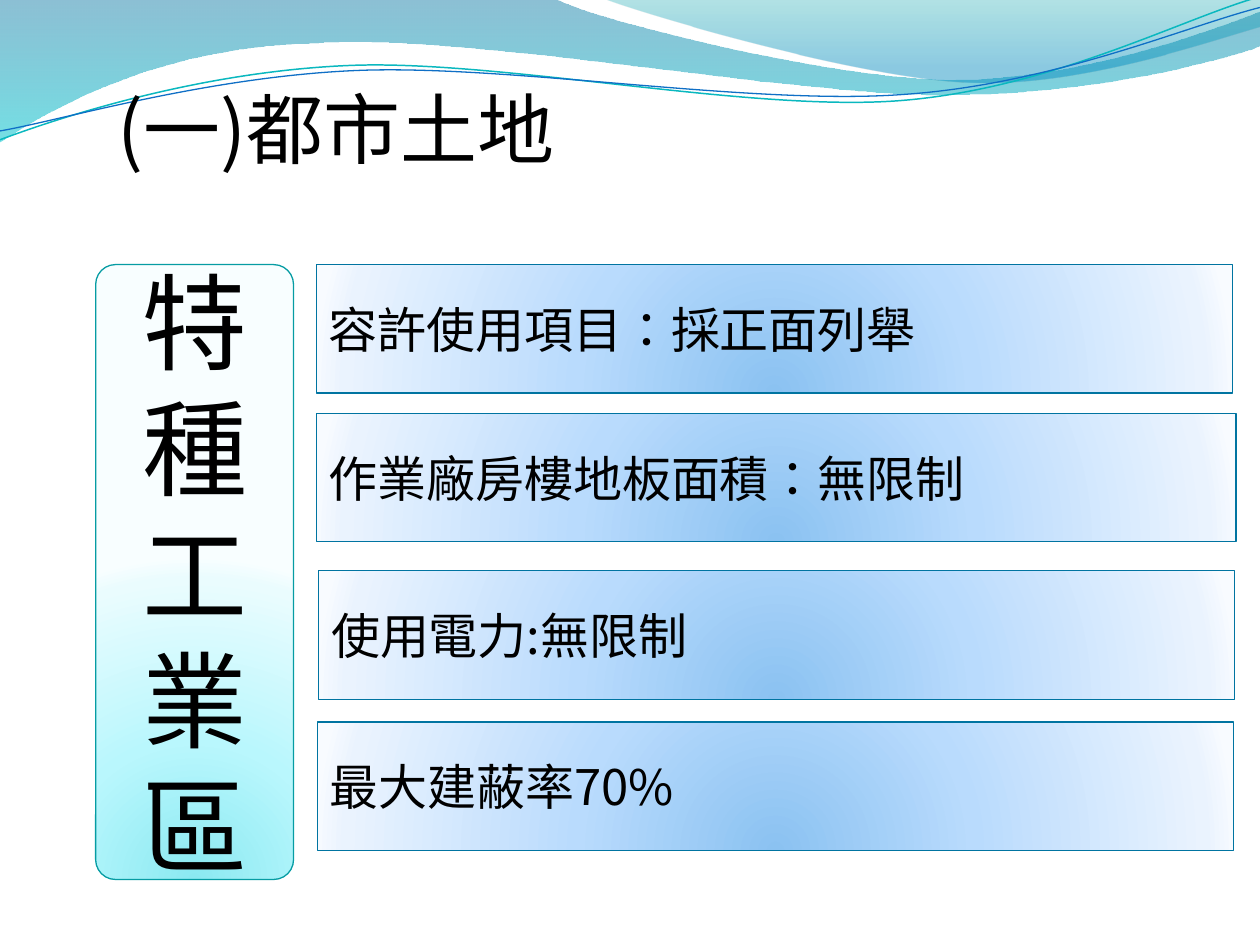
import dataclasses
import math

import pptx
import pptx.dml.color
import pptx.enum.shapes
import pptx.enum.text
import pptx.oxml
import pptx.oxml.ns
import pptx.util
from pptx.util import Inches


@dataclasses.dataclass(frozen=True)
class Theme:
    font: str = "Noto Sans CJK SC"
    language: str = "zh-TW"
    ink: str = "000000"
    title_size: int = 44
    zone_size: int = 60
    rule_size: int = 28
    line_pitch: float = 1.2
    outline: float = 0.75
    zone_line: str = "069CA3"
    zone_stops: tuple = ((0, "8BE9F1", 100), (43, "B9F7FD", 100), (93, "EAFCFE", 100), (100, "F8FEFF", 100))
    rule_line: str = "0074A1"
    rule_stops: tuple = ((0, "8BC2F1", 100), (43, "B9DBFD", 100), (93, "EAF3FE", 100), (100, "F8FBFF", 100))
    wave_stops: tuple = ((0, "0074A1", 45), (100, "00C6CF", 55))
    crest_stops: tuple = ((0, "00A1A9", 30), (80, "008BBF", 45))
    teal_line: str = "0AB8BF"
    blue_line: str = "0F6FC6"


THEME = Theme()
DOWNWARD = '<a:lin ang="5400000" scaled="0"/>'
FROM_BELOW = '<a:path path="circle"><a:fillToRect l="50000" t="130000" r="50000" b="-30000"/></a:path>'
STRAND_TILT = -2.7

WAVE = [(0, 0), (4.4, -0.01), (4.76, 0.17, 6.64, 0.63, 7.58, 0.63), (8.53, 0.63, 9.58, 0.26, 10, 0.09),
        (10.01, 0.36), (9.83, 0.44, 8.7, 0.76, 7.46, 0.75), (6.22, 0.75, 3.82, 0.28, 2.57, 0.34),
        (1.29, 0.36, 0.46, 0.83, -0.01, 1.13)]
CREST = [(4.79, -0.01), (5.09, 0.11, 6.82, 0.62, 7.69, 0.65), (8.56, 0.69, 9.61, 0.32, 10, 0.21), (10, 0)]
TEAL_STRAND = [(0, 1.11), (0.48, 0.93, 1.58, 0.57, 2.77, 0.52), (3.95, 0.47, 5.93, 0.89, 7.13, 0.8),
               (8.33, 0.71, 9.38, 0.15, 9.98, -0.02)]
BLUE_STRAND = [(0, 1.04), (0.47, 0.96, 1.64, 0.61, 2.83, 0.56), (4.03, 0.51, 5.97, 0.84, 7.17, 0.75),
               (8.36, 0.67, 9.41, 0.21, 10, 0.06)]

RULES = [
    ("容許使用項目：採正面列舉", (2.51, 2.1, 7.27, 1.02)),
    ("作業廠房樓地板面積：無限制", (2.51, 3.28, 7.3, 1.02)),
    ("使用電力:無限制", (2.53, 4.53, 7.27, 1.02)),
    ("最大建蔽率70%", (2.52, 5.73, 7.27, 1.02)),
]


def rgb(color):
    return pptx.dml.color.RGBColor.from_string(color)


def parse_xml(tag, body, attributes=""):
    namespace = pptx.oxml.ns.nsdecls("a")
    return pptx.oxml.parse_xml(f"<a:{tag} {namespace} {attributes}>{body}</a:{tag}>")


def write_text(paragraph, text, size, align="LEFT", pitch=None):
    paragraph.alignment = getattr(pptx.enum.text.PP_ALIGN, align)
    if pitch:
        paragraph.line_spacing = pptx.util.Pt(size * pitch)
    run = paragraph.add_run()
    run.text = text
    run.font.size = pptx.util.Pt(size)
    run.font.name = THEME.font
    run.font.color.rgb = rgb(THEME.ink)
    properties = run.font._element
    properties.set("lang", THEME.language)
    properties.find(pptx.oxml.ns.qn("a:latin")).addnext(parse_xml("ea", "", f'typeface="{THEME.font}"'))


def fill_gradient(shape, stops, direction):
    shape.fill.background()
    marks = "".join(
        f'<a:gs pos="{place * 1000}"><a:srgbClr val="{color}"><a:alpha val="{alpha * 1000}"/></a:srgbClr></a:gs>'
        for place, color, alpha in stops)
    properties = shape.element.spPr
    properties.replace(properties.find(pptx.oxml.ns.qn("a:noFill")),
                       parse_xml("gradFill", f"<a:gsLst>{marks}</a:gsLst>{direction}", 'rotWithShape="1"'))


def set_line(shape, color, width):
    shape.line.color.rgb = rgb(color)
    shape.line.width = pptx.util.Pt(width)


def pairs(segment):
    return list(zip(segment[::2], segment[1::2]))


def turn(outline, degrees):
    anchors = [segment[-2:] for segment in outline]
    center_x, center_y = ((min(values) + max(values)) / 2 for values in zip(*anchors))
    cos, sin = math.cos(math.radians(degrees)), math.sin(math.radians(degrees))
    return [tuple(value for x, y in pairs(segment) for value in (
        center_x + (x - center_x) * cos - (y - center_y) * sin,
        center_y + (x - center_x) * sin + (y - center_y) * cos)) for segment in outline]


def add_curve(slide, outline, closed):
    start, *anchors = [tuple(map(Inches, segment[-2:])) for segment in outline]
    builder = slide.shapes.build_freeform(*start)
    builder.add_line_segments(anchors, close=closed)
    curve = builder.convert_to_shape()
    curve.shadow.inherit = False
    straights = list(curve.element.iter(pptx.oxml.ns.qn("a:lnTo")))
    for straight, segment in zip(straights, outline[1:]):
        if len(segment) == 6:
            points = "".join(f'<a:pt x="{Inches(x) - curve.left}" y="{Inches(y) - curve.top}"/>'
                             for x, y in pairs(segment))
            straight.getparent().replace(straight, parse_xml("cubicBezTo", points))
    return curve


def add_waves(slide):
    for outline, stops in ((WAVE, THEME.wave_stops), (CREST, THEME.crest_stops)):
        band = add_curve(slide, outline, True)
        fill_gradient(band, stops, DOWNWARD)
        band.line.fill.background()
    for outline, color, width in ((TEAL_STRAND, THEME.teal_line, 0.85), (BLUE_STRAND, THEME.blue_line, 0.75)):
        strand = add_curve(slide, turn(outline, -STRAND_TILT), False)
        strand.rotation = STRAND_TILT
        strand.fill.background()
        set_line(strand, color, width)


def place_title(slide, text, box):
    title = slide.shapes.title
    title.left, title.top, title.width, title.height = map(Inches, box)
    frame = title.text_frame
    frame.word_wrap = True
    frame.auto_size = pptx.enum.text.MSO_AUTO_SIZE.NONE
    frame.vertical_anchor = pptx.enum.text.MSO_ANCHOR.TOP
    frame.margin_top = Inches(0.05)
    write_text(frame.paragraphs[0], text, THEME.title_size, pitch=THEME.line_pitch)
    slide.shapes.element.append(title.element)


def add_panel(slide, kind, box, stops, line):
    panel = slide.shapes.add_shape(kind, *map(Inches, box))
    panel.shadow.inherit = False
    fill_gradient(panel, stops, FROM_BELOW)
    set_line(panel, line, THEME.outline)
    panel.text_frame.word_wrap = True
    panel.text_frame.vertical_anchor = pptx.enum.text.MSO_ANCHOR.MIDDLE
    return panel


def add_zone(slide, lines, box):
    zone = add_panel(slide, pptx.enum.shapes.MSO_SHAPE.ROUNDED_RECTANGLE, box, THEME.zone_stops, THEME.zone_line)
    zone.adjustments[0] = 0.1
    frame = zone.text_frame
    for index, line in enumerate(lines):
        paragraph = frame.add_paragraph() if index else frame.paragraphs[0]
        write_text(paragraph, line, THEME.zone_size, align="CENTER", pitch=THEME.line_pitch)


def add_rule(slide, text, box):
    rule = add_panel(slide, pptx.enum.shapes.MSO_SHAPE.RECTANGLE, box, THEME.rule_stops, THEME.rule_line)
    write_text(rule.text_frame.paragraphs[0], text, THEME.rule_size)


def main():
    deck = pptx.Presentation()
    deck.slide_width, deck.slide_height = Inches(10), Inches(7.5)
    slide = deck.slides.add_slide(deck.slide_layouts[5])
    add_waves(slide)
    place_title(slide, "(一)都市土地", (0.83, 0.6, 8.83, 6.61))
    add_zone(slide, ("特種工業", "區"), (0.76, 2.1, 1.57, 4.88))
    for text, box in RULES:
        add_rule(slide, text, box)
    deck.save("out.pptx")


if __name__ == "__main__":
    main()
